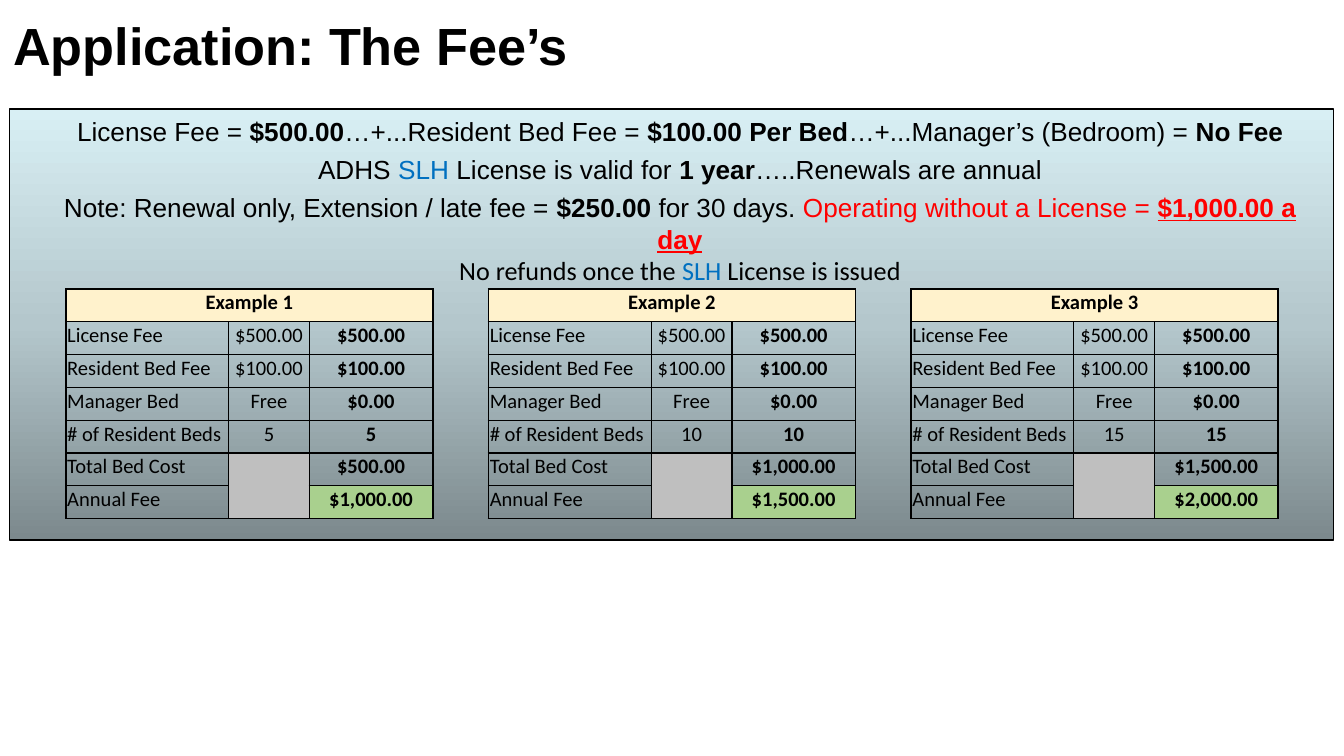
from lxml import etree
from pptx import Presentation
from pptx.dml.color import RGBColor
from pptx.enum.shapes import MSO_SHAPE
from pptx.enum.text import MSO_ANCHOR, MSO_AUTO_SIZE, PP_ALIGN
from pptx.oxml.ns import qn
from pptx.util import Pt

RECT = MSO_SHAPE.RECTANGLE
TOP, BOTTOM = MSO_ANCHOR.TOP, MSO_ANCHOR.BOTTOM
GROW = MSO_AUTO_SIZE.SHAPE_TO_FIT_TEXT
LEFT, CENTER = PP_ALIGN.LEFT, PP_ALIGN.CENTER

HEX = {
    "black": "000000", "blue": "0070C0", "red": "FF0000",
    "cream": "FFF2CC", "gray": "BFBFBF", "green": "A9D08E",
    "dark": "7C898D", "mid": "B4C7CC", "light": "D8EFF4",
}
NOTES = [
    [("License Fee = ", {}), ("$500.00", {"bold": True}),
     ("…+...Resident Bed Fee = ", {}), ("$100.00 Per Bed", {"bold": True}),
     ("…+...Manager’s (Bedroom) = ", {}), ("No Fee", {"bold": True})],
    [("ADHS ", {}), ("SLH", {"color": "blue"}), (" License is valid for ", {}),
     ("1 year", {"bold": True}), ("…..Renewals are annual", {})],
    [("Note: Renewal only, Extension / late fee = ", {}),
     ("$250.00 ", {"bold": True}), ("for 30 days. ", {}),
     ("Operating without a License = ", {"color": "red"}),
     ("$1,000.00 a day", {"color": "red", "bold": True, "line": True}),
     None,
     ("No refunds once the ", {"face": "Calibri"}),
     ("SLH", {"face": "Calibri", "color": "blue"}),
     (" License is issued", {"face": "Calibri"})],
]
BEDS = [5, 10, 15]
COLS = [87.2, 43.2, 66.2]
ROW = 17.6


def rgb(name):
    return RGBColor.from_string(HEX[name])


def add_run(para, text, size=14, face="Arial", color="black", bold=False, line=False):
    run = para.add_run()
    run.text = text
    font = run.font
    font.size, font.name, font.bold = Pt(size), face, bold
    font.color.rgb = rgb(color)
    if line:
        font.underline = True


def add_title(slide):
    box = slide.shapes.add_textbox(Pt(0), Pt(0), Pt(360), Pt(48))
    frame = box.text_frame
    frame.word_wrap = True
    frame.auto_size = GROW
    frame.margin_left = frame.margin_right = Pt(7.2)
    frame.margin_top = frame.margin_bottom = Pt(7.2)
    add_run(frame.paragraphs[0], "Application: The Fee’s", size=28, bold=True)


def shade(shape):
    shape.fill.gradient()
    shape.fill.gradient_angle = 90
    stops = shape._element.spPr.find(qn("a:gradFill")).find(qn("a:gsLst"))
    for stop in list(stops):
        stops.remove(stop)
    for pos, name in ((0, "dark"), (50, "mid"), (100, "light")):
        stop = etree.SubElement(stops, qn("a:gs"), pos=str(pos * 1000))
        etree.SubElement(stop, qn("a:srgbClr"), val=HEX[name])


def add_panel(slide):
    panel = slide.shapes.add_shape(RECT, Pt(5.2), Pt(58.3), Pt(709.2), Pt(231))
    panel.shadow.inherit = False
    shade(panel)
    panel.line.color.rgb = rgb("black")
    panel.line.width = Pt(0.75)
    frame = panel.text_frame
    frame.word_wrap = True
    frame.vertical_anchor = TOP
    frame.margin_left = frame.margin_right = Pt(7.2)
    frame.margin_top = frame.margin_bottom = Pt(3.6)
    for i, runs in enumerate(NOTES):
        para = frame.add_paragraph() if i else frame.paragraphs[0]
        para.alignment = CENTER
        para._p.get_or_add_pPr().set("marL", str(Pt(9)))
        if i:
            para.space_before = Pt(3.6)
        for item in runs:
            if item is None:
                para.add_line_break()
            else:
                add_run(para, item[0], **item[1])


def set_edges(cell, widths):
    props = cell._tc.get_or_add_tcPr()
    for i, (side, width) in enumerate(zip("LRTB", widths)):
        edge = etree.Element(qn("a:ln" + side), w=str(Pt(width)))
        fill = etree.SubElement(edge, qn("a:solidFill"))
        etree.SubElement(fill, qn("a:srgbClr"), val=HEX["black"])
        props.insert(i, edge)


def fill_cell(cell, text, align, bold, fill):
    cell.vertical_anchor = BOTTOM
    cell.margin_left = cell.margin_right = cell.margin_top = Pt(0.72)
    cell.margin_bottom = Pt(3.6)
    para = cell.text_frame.paragraphs[0]
    para.alignment = align
    if text:
        add_run(para, text, size=11, face="Calibri", bold=bold)
    else:
        para.font.size = Pt(11)
    if fill:
        cell.fill.solid()
        cell.fill.fore_color.rgb = rgb(fill)
    else:
        cell.fill.background()


def fee_rows(num, beds):
    cost = beds * 100
    return [
        (f"Example {num}", "", ""),
        ("License Fee", "$500.00", "$500.00"),
        ("Resident Bed Fee", "$100.00", "$100.00"),
        ("Manager Bed", "Free", "$0.00"),
        ("# of Resident Beds", str(beds), str(beds)),
        ("Total Bed Cost", "", f"${cost:,.2f}"),
        ("Annual Fee", "", f"${cost + 500:,.2f}"),
    ]


def add_fees(slide, left, num, beds):
    rows = fee_rows(num, beds)
    last = len(rows) - 1
    end = len(COLS) - 1
    frame = slide.shapes.add_table(len(rows), len(COLS), Pt(left), Pt(154.8),
                                   Pt(sum(COLS)), Pt(ROW * len(rows)))
    table = frame.table
    table.first_row = table.horz_banding = False
    for col, width in zip(table.columns, COLS):
        col.width = Pt(width)
    fills = {(0, 0): "cream", (last - 1, 1): "gray", (last, end): "green"}
    for r, texts in enumerate(rows):
        table.rows[r].height = Pt(ROW)
        for c, text in enumerate(texts):
            cell = table.cell(r, c)
            align = LEFT if r and c == 0 else CENTER
            fill_cell(cell, text, align, r == 0 or c == end, fills.get((r, c)))
            outer = (c == 0, c == end, r == 0, r == last)
            set_edges(cell, [1 if side else 0.75 for side in outer])
    table.cell(0, 0).merge(table.cell(0, end))
    table.cell(last - 1, 1).merge(table.cell(last, 1))
    set_span(table, last, end)


def set_span(table, last, end):
    for cell, side in ((table.cell(0, 0), "R"), (table.cell(last - 1, 1), "B")):
        edge = cell._tc.tcPr.find(qn("a:ln" + side))
        edge.set("w", str(Pt(1)))


def main():
    deck = Presentation()
    deck.slide_width, deck.slide_height = Pt(720), Pt(405)
    slide = deck.slides.add_slide(deck.slide_layouts[6])
    add_panel(slide)
    add_title(slide)
    for i, beds in enumerate(BEDS):
        add_fees(slide, 35.3 + i * 226.4, i + 1, beds)
    deck.save("out.pptx")


if __name__ == "__main__":
    main()
